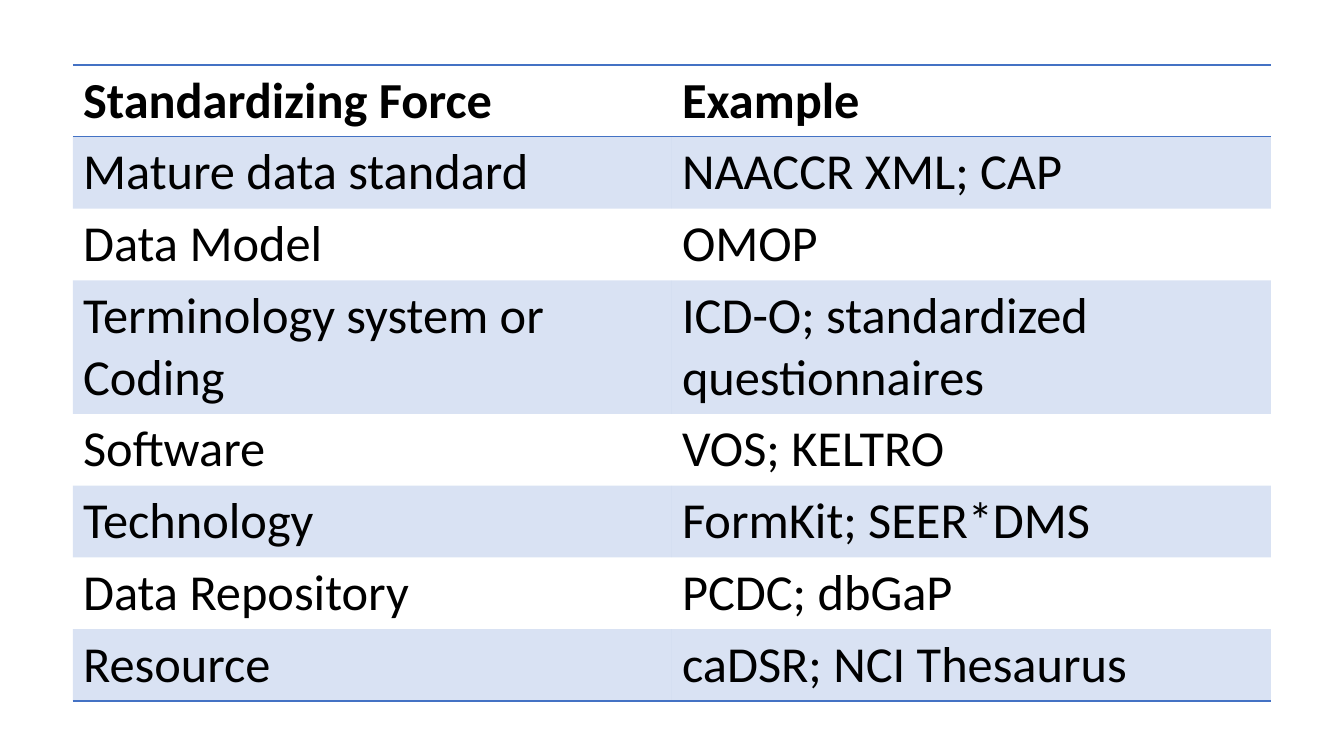
from lxml.etree import SubElement
from pptx import Presentation
from pptx.dml.color import RGBColor
from pptx.oxml.ns import qn
from pptx.util import Emu, Pt

SCALE = 914400 / 100.8
COLORS = {"text": "000000", "accent": "4472C4"}
PLAIN = "{2D5ABB26-0587-4C30-8999-92F81FD0307C}"
TINT = 20000
LEFT, TOP = 73, 65
COL, LINE, DOUBLE = 599, 71, 133
ROWS = [
    ("Standardizing Force", "Example"),
    ("Mature data standard", "NAACCR XML; CAP"),
    ("Data Model", "OMOP"),
    ("Terminology system or Coding", "ICD-O; standardized questionnaires"),
    ("Software", "VOS; KELTRO"),
    ("Technology", "FormKit; SEER*DMS"),
    ("Data Repository", "PCDC; dbGaP"),
    ("Resource", "caDSR; NCI Thesaurus"),
]
TALL = 3
LAST = len(ROWS) - 1


def px(count):
    return Emu(round(count * SCALE))


def shade(cell):
    """Fill the cell with a see-through accent tint."""
    cell.fill.solid()
    cell.fill.fore_color.rgb = RGBColor.from_string(COLORS["accent"])
    color = cell._tc.tcPr.find(qn("a:solidFill"))[0]
    SubElement(color, qn("a:alpha"), val=str(TINT))


def rule(cell, side):
    """Draw one edge of the cell; call before any fill is set."""
    line = SubElement(cell._tc.get_or_add_tcPr(), qn(f"a:ln{side}"), w=str(Pt(1)))
    fill = SubElement(line, qn("a:solidFill"))
    SubElement(fill, qn("a:srgbClr"), val=COLORS["accent"])


def write(cell, text, bold):
    cell.text = text
    font = cell.text_frame.paragraphs[0].runs[0].font
    for name, value in {"name": "Calibri", "size": Pt(36), "bold": bold}.items():
        setattr(font, name, value)
    font.color.rgb = RGBColor.from_string(COLORS["text"])


def add_grid(slide):
    high = LINE * LAST + DOUBLE
    frame = slide.shapes.add_table(
        len(ROWS), 2, px(LEFT), px(TOP), px(2 * COL), px(high))
    table = frame.table
    table.horz_banding = False
    table._tbl.tblPr.find(qn("a:tableStyleId")).text = PLAIN
    for col in table.columns:
        col.width = px(COL)
    for r, texts in enumerate(ROWS):
        table.rows[r].height = px(DOUBLE if r == TALL else LINE)
        sides = {0: "TB", LAST: "B"}.get(r, "")
        for c, text in enumerate(texts):
            cell = table.cell(r, c)
            write(cell, text, r == 0)
            for side in sides:
                rule(cell, side)
            if r % 2:
                shade(cell)
            else:
                cell.fill.background()


def main():
    deck = Presentation()
    deck.slide_width, deck.slide_height = px(1344), px(756)
    slide = deck.slides.add_slide(deck.slide_layouts[6])
    add_grid(slide)
    deck.save("out.pptx")


if __name__ == "__main__":
    main()
